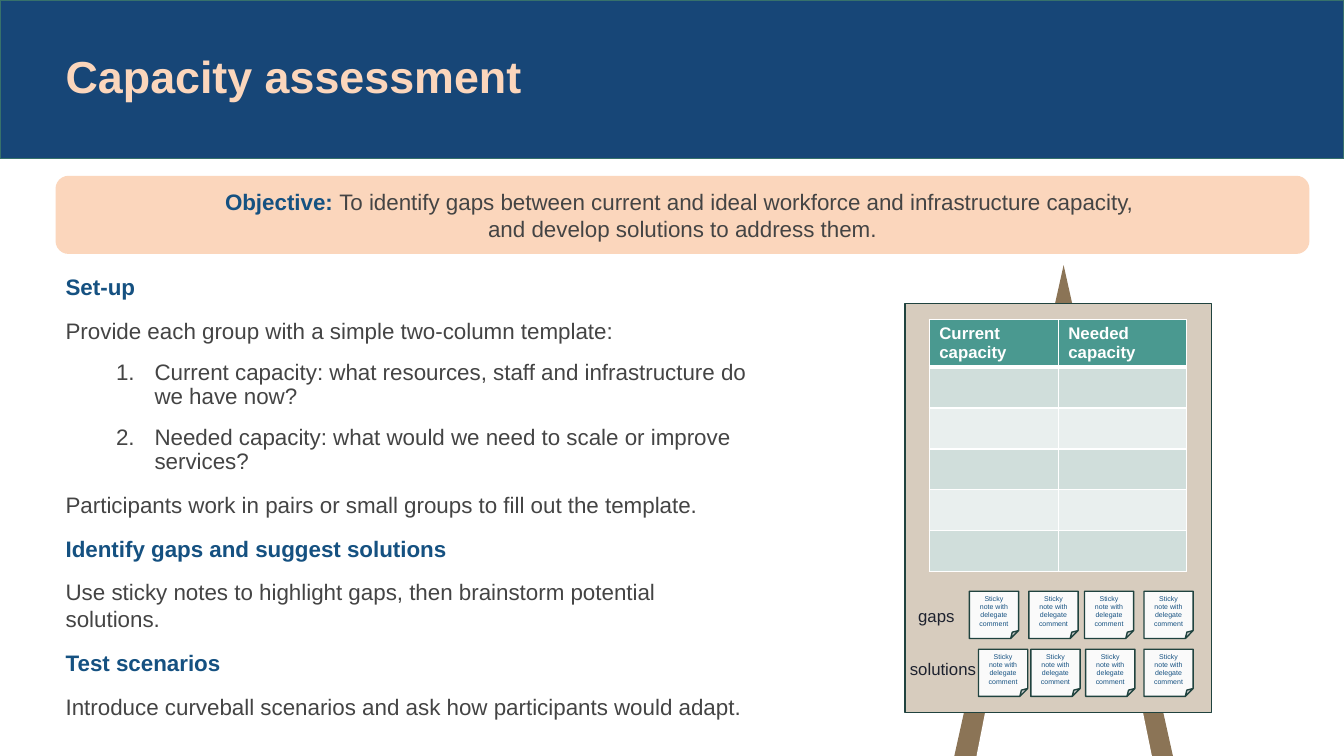
from lxml import etree
from pptx import Presentation
from pptx.dml.color import RGBColor
from pptx.enum.shapes import MSO_SHAPE
from pptx.enum.text import MSO_ANCHOR, MSO_AUTO_SIZE, PP_ALIGN
from pptx.oxml.ns import qn
from pptx.util import Cm, Pt

RECTANGLE = MSO_SHAPE.RECTANGLE
ROUNDED = MSO_SHAPE.ROUNDED_RECTANGLE
TRIANGLE = MSO_SHAPE.ISOSCELES_TRIANGLE
FOLDED_CORNER = MSO_SHAPE.FOLDED_CORNER
MIDDLE, TOP = MSO_ANCHOR.MIDDLE, MSO_ANCHOR.TOP
LEFT, CENTER = PP_ALIGN.LEFT, PP_ALIGN.CENTER
NO_AUTOFIT = MSO_AUTO_SIZE.NONE

NAVY = RGBColor(0x17, 0x46, 0x77)
BLUE = RGBColor(0x15, 0x51, 0x81)
PEACH = RGBColor(0xFB, 0xD6, 0xBC)
GREY = RGBColor(0x44, 0x44, 0x44)
INK = RGBColor(0x1E, 0x22, 0x2F)
WHITE = RGBColor(0xFF, 0xFF, 0xFF)
PAPER = RGBColor(0xFA, 0xFA, 0xFA)
WOOD = RGBColor(0x8B, 0x74, 0x56)
BOARD = RGBColor(0xD7, 0xCC, 0xBE)
DARK_GREEN = RGBColor(0x20, 0x43, 0x3F)
BAND_EDGE = RGBColor(0x37, 0x71, 0x6B)
TEAL = RGBColor(0x4A, 0x99, 0x90)
ROW_TINTS = (RGBColor(0xD0, 0xDE, 0xDB), RGBColor(0xE9, 0xEF, 0xEE))

HEADING, PLAIN, NUMBERED = "heading", "plain", "numbered"
INSTRUCTIONS = (
    (HEADING, "Set-up"),
    (PLAIN, "Provide each group with a simple two-column template:"),
    (NUMBERED, "Current capacity: what resources, staff and infrastructure do we have now?"),
    (NUMBERED, "Needed capacity: what would we need to scale or improve services?"),
    (PLAIN, "Participants work in pairs or small groups to fill out the template."),
    (HEADING, "Identify gaps and suggest solutions"),
    (PLAIN, "Use sticky notes to highlight gaps, then brainstorm potential solutions."),
    (HEADING, "Test scenarios"),
    (PLAIN, "Introduce curveball scenarios and ask how participants would adapt."),
)
NOTE_ROWS = (
    ("gaps", 22.89, 14.88, 14.9, (24.43, 25.93, 27.33, 28.83)),
    ("solutions", 22.68, 16.23, 16.36, (24.66, 25.98, 27.36, 28.83)),
)


def place(item, left, top, width, height):
    item.left, item.top = Cm(left), Cm(top)
    item.width, item.height = Cm(width), Cm(height)


def style_runs(paragraph, size, color, bold=False):
    for run in paragraph.runs:
        run.font.name = "Arial"
        run.font.size = Pt(size)
        run.font.bold = bold
        run.font.color.rgb = color


def add_box(shapes, kind, box, fill, edge=None):
    shape = shapes.add_shape(kind, *map(Cm, box))
    shape.shadow.inherit = False
    shape.fill.solid()
    shape.fill.fore_color.rgb = fill
    if edge is None:
        shape.line.fill.background()
    else:
        shape.line.color.rgb = edge
        shape.line.width = Pt(1)
    return shape


def set_marker(paragraph, numbered):
    properties = paragraph._p.get_or_add_pPr()
    properties.set("marL", str(Cm(2.24) if numbered else 0))
    properties.set("indent", str(Cm(-0.97) if numbered else 0))
    if numbered:
        color = etree.SubElement(properties, qn("a:buClr"))
        etree.SubElement(color, qn("a:srgbClr"), val=str(GREY))
        etree.SubElement(properties, qn("a:buAutoNum"), type="arabicPeriod")
    else:
        etree.SubElement(properties, qn("a:buNone"))


def add_header(slide):
    band = add_box(slide.shapes, RECTANGLE, (0, 0, 33.87, 3.99), NAVY, BAND_EDGE)
    slide.shapes.element.insert(2, band.element)
    title = slide.shapes.title
    place(title, 1.4, 0, 25.81, 3.99)
    title.text_frame.text = "Capacity assessment"
    title.text_frame.vertical_anchor = MIDDLE
    title.text_frame.auto_size = NO_AUTOFIT
    paragraph = title.text_frame.paragraphs[0]
    paragraph.alignment = LEFT
    paragraph.line_spacing = 0.9
    style_runs(paragraph, 32, PEACH, True)


def add_objective(slide):
    objective = add_box(slide.shapes, ROUNDED, (1.4, 4.43, 31.6, 1.97), PEACH)
    objective.text_frame.vertical_anchor = MIDDLE
    paragraph = objective.text_frame.paragraphs[0]
    paragraph.text = "Objective: "
    paragraph.add_run().text = (
        "To identify gaps between current and ideal workforce and infrastructure capacity, "
    )
    paragraph.add_line_break()
    paragraph.add_run().text = "and develop solutions to address them."
    paragraph.alignment = CENTER
    style_runs(paragraph, 16, GREY)
    label_font = paragraph.runs[0].font
    label_font.bold = True
    label_font.color.rgb = BLUE


def add_instructions(slide):
    body = slide.placeholders[1]
    place(body, 1.4, 6.76, 17.73, 12.04)
    frame = body.text_frame
    frame.text = "\n".join(text for _, text in INSTRUCTIONS)
    frame.auto_size = NO_AUTOFIT
    frame.vertical_anchor = TOP
    for index, (role, _) in enumerate(INSTRUCTIONS):
        paragraph = frame.paragraphs[index]
        numbered = role == NUMBERED
        set_marker(paragraph, numbered)
        paragraph.level = 1 if numbered else 0
        paragraph.line_spacing = 0.9 if numbered else 1.0
        paragraph.space_before = Pt(6 if index else 0)
        paragraph.space_after = Pt(6)
        heading = role == HEADING
        style_runs(paragraph, 16, BLUE if heading else GREY, heading)


def add_easel(slide):
    easel = slide.shapes.add_group_shape().shapes
    add_box(easel, TRIANGLE, (24.05, 6.68, 5.51, 12.37), WOOD)
    opening = add_box(easel, TRIANGLE, (24.61, 8.05, 4.42, 11), WHITE)
    opening.adjustments[0] = 0.49
    add_box(easel, RECTANGLE, (22.81, 7.65, 7.72, 10.31), BOARD, DARK_GREEN)


def set_borders(cell, top, bottom):
    properties = cell._tc.get_or_add_tcPr()
    for side, width in (("L", 1), ("R", 1), ("T", top), ("B", bottom)):
        border = etree.SubElement(properties, qn(f"a:ln{side}"), w=str(Pt(width)))
        fill = etree.SubElement(border, qn("a:solidFill"))
        etree.SubElement(fill, qn("a:srgbClr"), val=str(WHITE))


def add_capacity_table(slide):
    box = map(Cm, (23.42, 8.05, 6.48, 6.02))
    table = slide.shapes.add_table(6, 2, *box).table
    for column, width in zip(table.columns, (3.25, 3.23)):
        column.width = Cm(width)
    headings = ("Current capacity", "Needed capacity")
    for row_index, row in enumerate(table.rows):
        row.height = Cm(0.97 if row_index else 1.19)
        for cell, heading in zip(row.cells, headings):
            set_borders(cell, 3 if row_index == 1 else 1, 1 if row_index else 3)
            cell.fill.solid()
            if row_index:
                cell.fill.fore_color.rgb = ROW_TINTS[(row_index - 1) % 2]
            else:
                cell.fill.fore_color.rgb = TEAL
                cell.text_frame.text = heading
                style_runs(cell.text_frame.paragraphs[0], 12, WHITE, True)


def add_row_label(slide, text, left, top):
    label = slide.shapes.add_textbox(Cm(left), Cm(top), Cm(2.57), Cm(0.94))
    label.text_frame.word_wrap = True
    label.text_frame.text = text
    paragraph = label.text_frame.paragraphs[0]
    paragraph.line_spacing = 1.5
    style_runs(paragraph, 12, INK)


def add_sticky_note(slide, left, top):
    note = add_box(slide.shapes, FOLDED_CORNER, (left, top, 1.24, 1.19), PAPER, DARK_GREEN)
    note.text_frame.text = "Sticky note with delegate comment"
    note.text_frame.vertical_anchor = MIDDLE
    paragraph = note.text_frame.paragraphs[0]
    paragraph.alignment = CENTER
    style_runs(paragraph, 5, BLUE)


def main():
    presentation = Presentation()
    presentation.slide_width, presentation.slide_height = Cm(33.87), Cm(19.05)
    slide = presentation.slides.add_slide(presentation.slide_layouts[1])
    add_header(slide)
    add_instructions(slide)
    add_easel(slide)
    add_capacity_table(slide)
    for label, label_left, label_top, note_top, note_lefts in NOTE_ROWS:
        add_row_label(slide, label, label_left, label_top)
        for note_left in note_lefts:
            add_sticky_note(slide, note_left, note_top)
    add_objective(slide)
    presentation.save("out.pptx")


if __name__ == "__main__":
    main()
